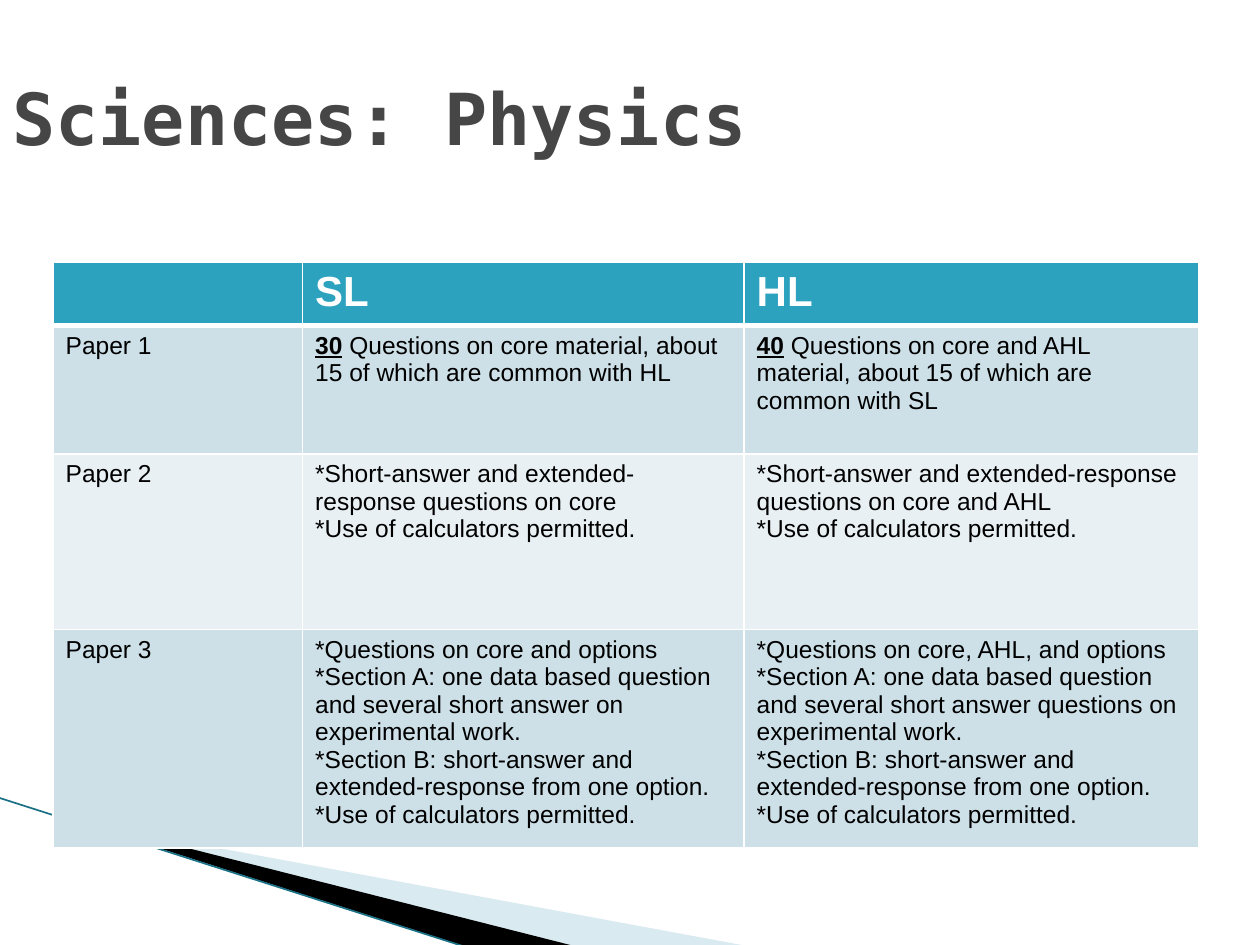
import pptx
import pptx.dml.color
import pptx.enum.shapes
import pptx.enum.text
import pptx.oxml
import pptx.oxml.ns
import pptx.util
from pptx.util import Cm

WHITE, BLACK, GREY = "FFFFFF", "000000", "464646"
TEAL, DARK_TEAL, PALE_TEAL = "2DA2BF", "1A7085", "A0CBDC"
BANDS = ["CDE0E8", "E8F0F4"]


def colour(value):
    return pptx.dml.color.RGBColor.from_string(value)


class SlideBuilder:
    title_font = "DejaVu Sans Mono"
    body_font = "Arial"

    def __init__(self, slide):
        self.slide = slide

    def set_font(self, font, name, size, value, bold):
        font.name, font.size, font.bold = name, pptx.util.Pt(size), bold
        font.color.rgb = colour(value)

    def wedge(self, points, fill, opacity=100):
        corners = [(Cm(x), Cm(y)) for x, y in points]
        builder = self.slide.shapes.build_freeform(*corners[0])
        builder.add_line_segments(corners[1:])
        wedge = builder.convert_to_shape()
        wedge.shadow.inherit = False
        wedge.line.fill.background()
        wedge.fill.solid()
        wedge.fill.fore_color.rgb = colour(fill)
        if opacity < 100:
            shade = wedge.fill._xPr.find(".//" + pptx.oxml.ns.qn("a:srgbClr"))
            alpha = pptx.oxml.parse_xml(
                f'<a:alpha {pptx.oxml.ns.nsdecls("a")} val="{opacity * 1000}"/>')
            shade.append(alpha)

    def line(self, start, end, value, width):
        line = self.slide.shapes.add_connector(
            pptx.enum.shapes.MSO_CONNECTOR.STRAIGHT,
            *[Cm(v) for v in (*start, *end)])
        line.line.color.rgb = colour(value)
        line.line.width = pptx.util.Pt(width)
        line._element.spPr.append(pptx.oxml.parse_xml(
            f'<a:effectLst {pptx.oxml.ns.nsdecls("a")}/>'))

    def title(self, text, left, top, width, height):
        box = self.slide.shapes.add_textbox(Cm(left), Cm(top), Cm(width), Cm(height))
        frame = box.text_frame
        frame.word_wrap = True
        frame.vertical_anchor = pptx.enum.text.MSO_ANCHOR.MIDDLE
        frame.text = text
        self.set_font(frame.paragraphs[0].font, self.title_font, 41, GREY, True)

    def cell_borders(self, cell, **widths):
        properties = cell._tc.get_or_add_tcPr()
        for side in "LRTB":
            properties.append(pptx.oxml.parse_xml(
                f'<a:ln{side} {pptx.oxml.ns.nsdecls("a")} '
                f'w="{pptx.util.Pt(widths.get(side, 1))}"><a:solidFill>'
                f'<a:srgbClr val="{WHITE}"/></a:solidFill></a:ln{side}>'))

    def cell_text(self, cell, lines, size, value, bold):
        cell.text = "\n".join(lines)
        for paragraph in cell.text_frame.paragraphs:
            self.set_font(paragraph.font, self.body_font, size, value, bold)

    def emphasise_count(self, cell):
        paragraph = cell.text_frame.paragraphs[0]
        count, rest = paragraph.text.split(" ", 1)
        paragraph.runs[0].text = count
        paragraph.runs[0].font.bold = True
        paragraph.runs[0].font.underline = True
        paragraph.add_run().text = " " + rest

    def table(self, rows, left, top, widths, heights):
        table = self.slide.shapes.add_table(
            len(rows), len(widths), Cm(left), Cm(top),
            Cm(sum(widths)), Cm(sum(heights))).table
        for column, width in zip(table.columns, widths):
            column.width = Cm(width)
        for r, (row, height) in enumerate(zip(rows, heights)):
            table.rows[r].height = Cm(height)
            header = r == 0
            # The rule below the header is heavier than the others
            rules = {"B": 3} if header else {"T": 3} if r == 1 else {}
            for c, lines in enumerate(row):
                cell = table.cell(r, c)
                self.cell_borders(cell, **rules)
                cell.fill.solid()
                cell.fill.fore_color.rgb = colour(
                    TEAL if header else BANDS[(r - 1) % 2])
                if header:
                    self.cell_text(cell, lines, 24, WHITE, True)
                else:
                    self.cell_text(cell, lines, 14, BLACK, False)
        return table


def main():
    deck = pptx.Presentation()
    deck.slide_width, deck.slide_height = Cm(25.4), Cm(19.05)
    page = SlideBuilder(deck.slides.add_slide(deck.slide_layouts[6]))

    # Corner decoration
    page.wedge([(1.4, 16.54), (15.11, 19.08), (11.58, 19.08), (1.4, 16.51)],
               PALE_TEAL, 40)
    page.wedge([(1.35, 16.48), (11.61, 19.08), (9.45, 19.1), (1.37, 16.51)], BLACK)
    page.line((-0.03, 16.08), (9.42, 19.1), DARK_TEAL, 0.95)

    # Title
    page.title("Sciences: Physics", 0, 0.76, 22.86, 3.18)

    # Exam papers at both levels
    calculators = "*Use of calculators permitted."
    section_b = "*Section B: short-answer and extended-response from one option."
    papers = [
        [[], ["SL"], ["HL"]],
        [["Paper 1"],
         ["30 Questions on core material, about 15 of which are common with HL"],
         ["40 Questions on core and AHL material, about 15 of which are common with SL"]],
        [["Paper 2"],
         ["*Short-answer and extended-response questions on core", calculators],
         ["*Short-answer and extended-response questions on core and AHL", calculators]],
        [["Paper 3"],
         ["*Questions on core and options",
          "*Section A: one data based question and several short answer on "
          "experimental work.", section_b, calculators],
         ["*Questions on core, AHL, and options",
          "*Section A: one data based question and several short answer questions on "
          "experimental work.", section_b, calculators]],
    ]
    exam_table = page.table(papers, 1.07, 5.29, [5.03, 8.9, 9.17],
                            [1.22, 2.59, 3.54, 4.14])
    for level in (1, 2):
        page.emphasise_count(exam_table.cell(1, level))

    deck.save("out.pptx")


if __name__ == "__main__":
    main()
